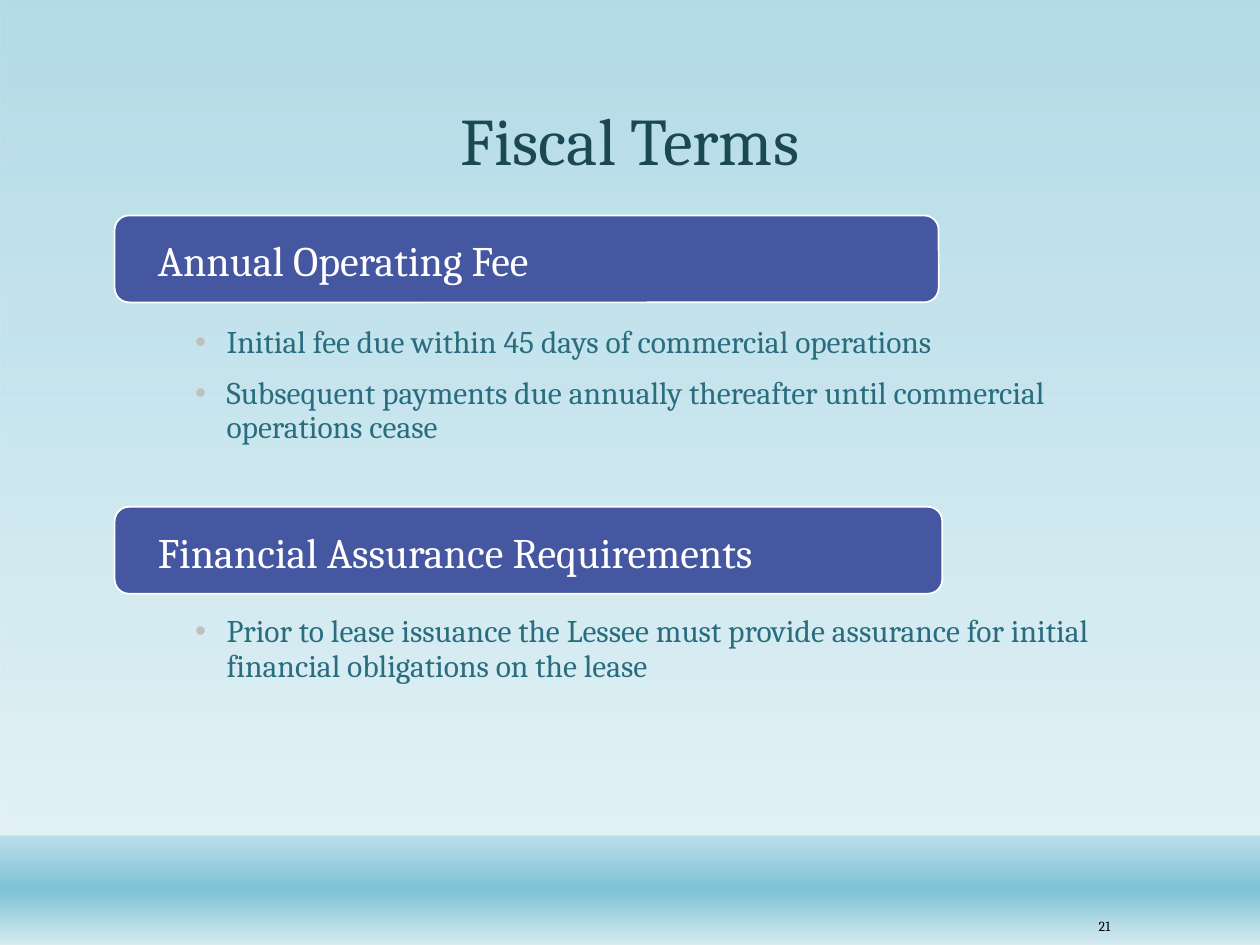
from lxml import etree
from pptx import Presentation
from pptx.dml.color import RGBColor
from pptx.enum.shapes import MSO_SHAPE
from pptx.enum.text import MSO_ANCHOR, PP_ALIGN
from pptx.oxml.ns import qn
from pptx.util import Pt

RECT, ROUNDED = MSO_SHAPE.RECTANGLE, MSO_SHAPE.ROUNDED_RECTANGLE
MIDDLE, BOTTOM, TOP = MSO_ANCHOR.MIDDLE, MSO_ANCHOR.BOTTOM, MSO_ANCHOR.TOP
LEFT, CENTER, RIGHT = PP_ALIGN.LEFT, PP_ALIGN.CENTER, PP_ALIGN.RIGHT

AQUA = RGBColor(0x7D, 0xC2, 0xD6)
PALE_AQUA = RGBColor(0xD4, 0xEB, 0xF1)
INDIGO = RGBColor(0x45, 0x57, 0xA1)
DARK_TEAL = RGBColor(0x1B, 0x48, 0x55)
TEAL = RGBColor(0x29, 0x6D, 0x7F)
BULLET_GREY = RGBColor(0xBF, 0xBF, 0xBF)
WHITE = RGBColor(0xFF, 0xFF, 0xFF)
BLACK = RGBColor(0x00, 0x00, 0x00)

WIDTH, HEIGHT = 720, 540
BODY_LEFT, BODY_WIDTH = 79.2, 561.6
BAR_LEFT, BAR_HEIGHT = 65.5, 49.7
BAND_TOP = 477.4


class SlideBuilder:
    font_name = "Cambria"

    def __init__(self, slide):
        self.slide = slide

    def shape(self, kind, box):
        shape = self.slide.shapes.add_shape(kind, *map(Pt, box))
        shape.shadow.inherit = False
        return shape

    def gradient(self, box, stops):
        """Draw a borderless top-to-bottom gradient; stops are (position, colour, opacity)."""
        area = self.shape(RECT, box)
        area.line.fill.background()
        area.fill.gradient()
        area.fill.gradient_angle = 270
        stop_list = area._element.spPr.find(".//" + qn("a:gsLst"))
        for old_stop in list(stop_list):
            stop_list.remove(old_stop)
        for position, colour, opacity in stops:
            stop = etree.SubElement(stop_list, qn("a:gs"), pos=str(position * 1000))
            tint = etree.SubElement(stop, qn("a:srgbClr"), val=str(colour))
            etree.SubElement(tint, qn("a:alpha"), val=str(opacity * 1000))

    def frame(self, shape, anchor, insets):
        settings = {"word_wrap": True, "vertical_anchor": anchor}
        sides = ("left", "top", "right", "bottom")
        settings.update({f"margin_{side}": Pt(inset) for side, inset in zip(sides, insets)})
        for name, value in settings.items():
            setattr(shape.text_frame, name, value)
        return shape.text_frame

    def set_text(self, paragraph, text, size, colour, align=LEFT, spacing=0.9):
        paragraph.text = text
        paragraph.alignment = align
        paragraph.line_spacing = spacing
        for name, value in {"name": self.font_name, "size": Pt(size)}.items():
            setattr(paragraph.font, name, value)
        paragraph.font.color.rgb = colour

    def label(self, text, box, size, colour, align, anchor, spacing=0.9):
        area = self.slide.shapes.add_textbox(*map(Pt, box))
        frame = self.frame(area, anchor, (7.2, 3.6, 7.2, 3.6))
        self.set_text(frame.paragraphs[0], text, size, colour, align, spacing)

    def heading_bar(self, text, top, width):
        bar = self.shape(ROUNDED, (BAR_LEFT, top, width, BAR_HEIGHT))
        bar.fill.solid()
        bar.fill.fore_color.rgb = INDIGO
        bar.line.color.rgb = WHITE
        bar.line.width = Pt(1)
        frame = self.frame(bar, MIDDLE, (22.3, 12.9, 8, 8))
        self.set_text(frame.paragraphs[0], text, 24, WHITE)

    def bullets(self, items, top, height):
        area = self.slide.shapes.add_textbox(*map(Pt, (BODY_LEFT, top, BODY_WIDTH, height)))
        frame = self.frame(area, TOP, (7.2, 0, 7.2, 0))
        for index, item in enumerate(items):
            paragraph = frame.add_paragraph() if index else frame.paragraphs[0]
            properties = paragraph._p.get_or_add_pPr()
            properties.set("marL", str(Pt(43.2)))
            properties.set("indent", str(Pt(-18)))
            bullet_colour = etree.SubElement(properties, qn("a:buClr"))
            etree.SubElement(bullet_colour, qn("a:srgbClr"), val=str(BULLET_GREY))
            etree.SubElement(properties, qn("a:buFont"), typeface="Arial")
            etree.SubElement(properties, qn("a:buChar"), char="•")
            self.set_text(paragraph, item, 18, TEAL)
            if index:
                paragraph.space_before = Pt(10)


def main():
    deck = Presentation()
    deck.slide_width, deck.slide_height = Pt(WIDTH), Pt(HEIGHT)
    builder = SlideBuilder(deck.slides.add_slide(deck.slide_layouts[6]))

    builder.gradient((0, 0, WIDTH, HEIGHT), [(0, AQUA, 58), (88, PALE_AQUA, 65)])
    builder.gradient((0, BAND_TOP, WIDTH, HEIGHT - BAND_TOP),
                     [(1, AQUA, 38), (49, AQUA, 100), (100, PALE_AQUA, 89)])
    builder.label("Fiscal Terms", (BODY_LEFT, 20.9, BODY_WIDTH, 85.7), 38, DARK_TEAL, CENTER, BOTTOM)

    sections = [
        ("Annual Operating Fee", 123.1, 470.9, 186.3, 68.5,
         ["Initial fee due within 45 days of commercial operations",
          "Subsequent payments due annually thereafter until commercial operations cease"]),
        ("Financial Assurance Requirements", 289.6, 473, 351.9, 39,
         ["Prior to lease issuance the Lessee must provide assurance for initial "
          "financial obligations on the lease"]),
    ]
    for heading, bar_top, bar_width, list_top, list_height, items in sections:
        builder.heading_bar(heading, bar_top, bar_width)
        builder.bullets(items, list_top, list_height)

    builder.label("21", (603.4, 519.8, 38.2, 18.7), 8, BLACK, RIGHT, MIDDLE, 1.0)
    deck.save("out.pptx")


if __name__ == "__main__":
    main()
